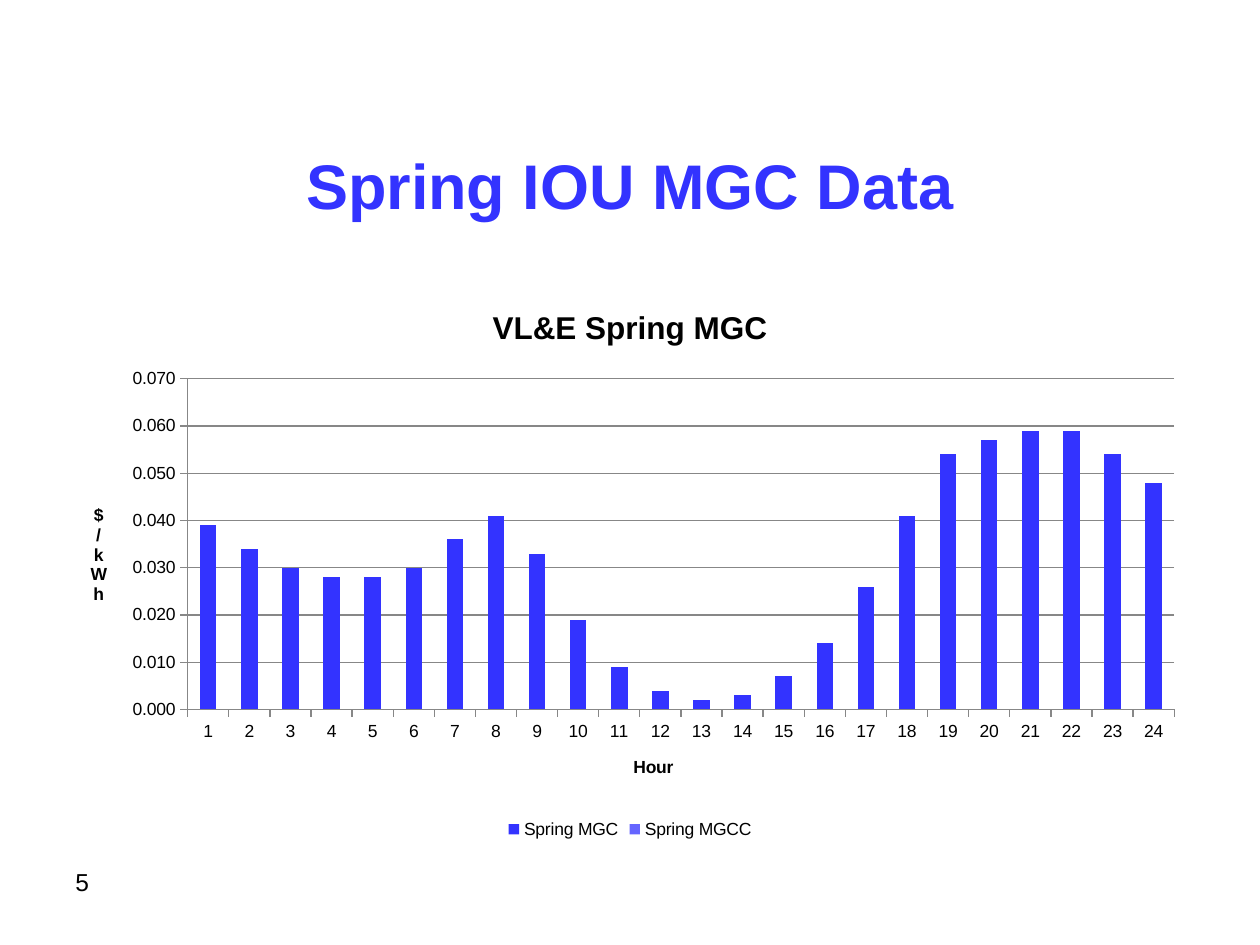
from lxml import etree
from pptx import Presentation
from pptx.chart import data
from pptx.dml.color import RGBColor
from pptx.enum import chart as ch, text
from pptx.oxml import ns
from pptx.util import Inches, Pt

COLORS = {"blue": "3333FF", "pale": "6565FF", "black": "000000", "grey": "878787"}
FONT = "Arial"
SPRING = [0.039, 0.034, 0.030, 0.028, 0.028, 0.030, 0.036, 0.041,
          0.033, 0.019, 0.009, 0.004, 0.002, 0.003, 0.007, 0.014,
          0.026, 0.041, 0.054, 0.057, 0.059, 0.059, 0.054, 0.048]


def rgb(name):
    return RGBColor.from_string(COLORS[name])


def style(font, size, color="black", bold=False):
    font.name, font.size, font.bold = FONT, Pt(size), bold
    font.color.rgb = rgb(color)


def add_text(slide, words, box, size, color="black", bold=False,
             align=text.PP_ALIGN.LEFT, anchor=text.MSO_ANCHOR.TOP):
    frame = slide.shapes.add_textbox(*map(Inches, box)).text_frame
    frame.word_wrap = True
    frame.vertical_anchor = anchor
    para = frame.paragraphs[0]
    para.text, para.alignment = words, align
    style(para.font, size, color, bold)


def set_title(owner, words, size):
    """Put a bold title on a chart or an axis title."""
    para = owner.text_frame.paragraphs[0]
    para.text = words
    style(para.font, size, bold=True)


def style_axis(axis, words):
    set_title(axis.axis_title, words, 10)
    axis.major_tick_mark = ch.XL_TICK_MARK.OUTSIDE
    axis.minor_tick_mark = ch.XL_TICK_MARK.NONE
    axis.format.line.color.rgb = rgb("grey")
    style(axis.tick_labels.font, 10)


def place_plot(chart, x, y, w, h):
    """Fix the inner plot area, in fractions of the chart."""
    area = chart._chartSpace.chart.plotArea
    for old in area.findall(ns.qn("c:layout")):
        area.remove(old)
    layout = etree.Element(ns.qn("c:layout"))
    area.insert(0, layout)
    manual = etree.SubElement(layout, ns.qn("c:manualLayout"))
    for tag, val in (("layoutTarget", "inner"), ("xMode", "edge"), ("yMode", "edge"),
                     ("x", x), ("y", y), ("w", w), ("h", h)):
        etree.SubElement(manual, ns.qn("c:" + tag)).set("val", str(val))


def add_chart(slide, box):
    source = data.CategoryChartData(number_format="0.000")
    source.categories = [str(hour) for hour in range(1, 25)]
    source.add_series("Spring MGC", SPRING)
    source.add_series("Spring MGCC", [0] * 24)
    chart = slide.shapes.add_chart(
        ch.XL_CHART_TYPE.COLUMN_STACKED, *map(Inches, box), source).chart
    style(chart.font, 10)
    chart.has_title = True
    set_title(chart.chart_title, "VL&E Spring MGC", 18)
    chart.chart_title.include_in_layout = False

    style_axis(chart.category_axis, "Hour")
    value = chart.value_axis
    style_axis(value, "$/kWh")
    body = value.axis_title.text_frame._txBody.bodyPr
    body.set("rot", "0")
    body.set("vert", "wordArtVert")
    value.minimum_scale, value.maximum_scale, value.major_unit = 0, 0.07, 0.01
    value.has_major_gridlines = True
    value.major_gridlines.format.line.color.rgb = rgb("grey")
    value.tick_labels.number_format = "0.000"
    value.tick_labels.number_format_is_linked = False

    plot = chart.plots[0]
    plot.gap_width, plot.overlap, plot.vary_by_categories = 150, 100, False
    for series, color in zip(plot.series, ("blue", "pale")):
        series.format.fill.solid()
        series.format.fill.fore_color.rgb = rgb(color)

    chart.has_legend = True
    chart.legend.position = ch.XL_LEGEND_POSITION.BOTTOM
    chart.legend.include_in_layout = False
    style(chart.legend.font, 10)
    place_plot(chart, 0.11, 0.17, 0.87, 0.59)


def main():
    deck = Presentation()
    deck.slide_width, deck.slide_height = Inches(10), Inches(7.5)
    slide = deck.slides.add_slide(deck.slide_layouts[6])
    add_text(slide, "Spring IOU MGC Data", (0.5, 0.92, 9, 1.08), 36, "blue", True,
             text.PP_ALIGN.CENTER, text.MSO_ANCHOR.MIDDLE)
    add_text(slide, "5", (0.5, 6.83, 1.83, 0.52), 14)
    add_chart(slide, (0.5, 2.25, 9, 4.45))
    deck.save("out.pptx")


if __name__ == "__main__":
    main()
